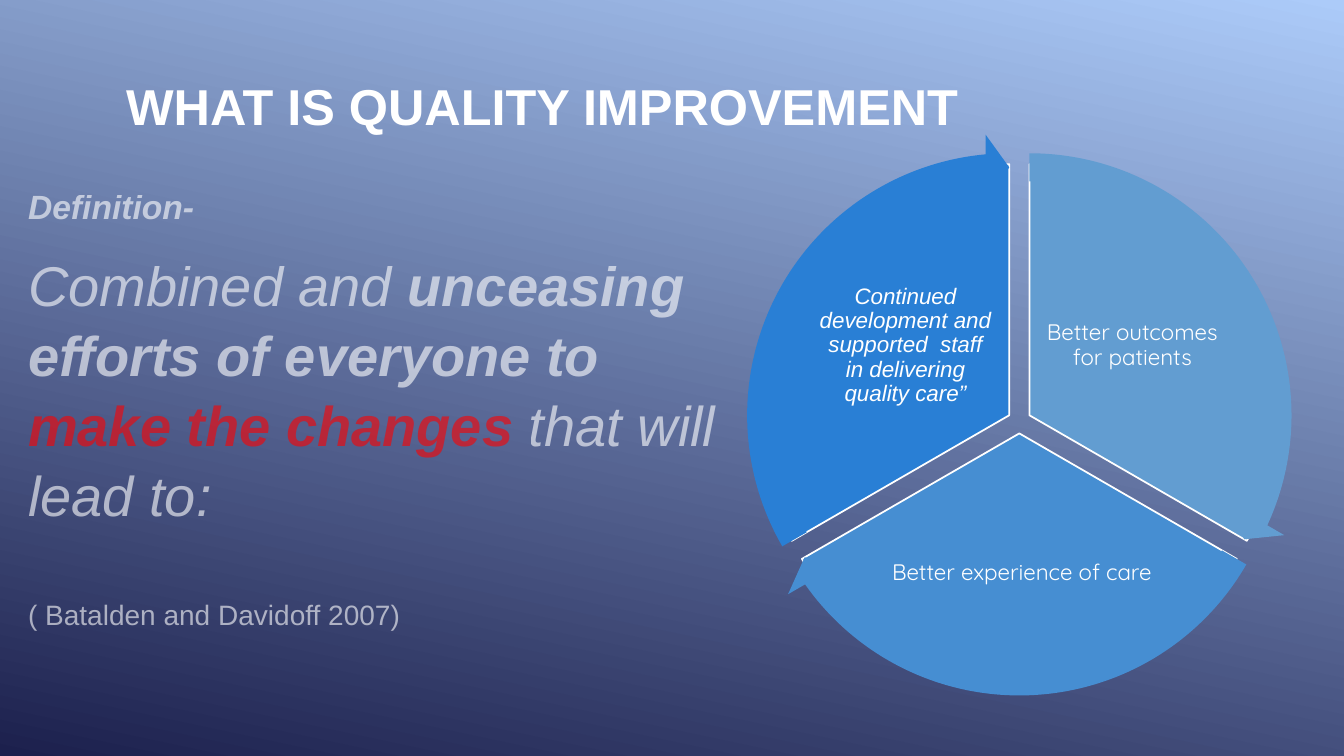
"""Build the slide on the meaning of quality improvement."""
from lxml import etree
from pptx import Presentation
from pptx.dml.color import RGBColor
from pptx.enum.shapes import MSO_SHAPE
from pptx.enum.text import MSO_ANCHOR, PP_ALIGN
from pptx.oxml.ns import qn
from pptx.util import Inches, Pt

PIE, ARROW = MSO_SHAPE.PIE, MSO_SHAPE.CIRCULAR_ARROW
TOP, MIDDLE = MSO_ANCHOR.TOP, MSO_ANCHOR.MIDDLE
CENTER = PP_ALIGN.CENTER
WHITE = RGBColor(0xFF, 0xFF, 0xFF)
RED = RGBColor(0xFF, 0x00, 0x00)
PALE = RGBColor(0xAC, 0xCB, 0xF9)
NAVY = RGBColor(0x1C, 0x20, 0x4D)
SKY = RGBColor(0x62, 0x9D, 0xD1)
AZURE = RGBColor(0x46, 0x8E, 0xD2)
BLUE = RGBColor(0x29, 0x7F, 0xD5)


def add_disc(kind, x, y, size, color, angles):
    disc = slide.shapes.add_shape(kind, Inches(x - size / 2), Inches(y - size / 2),
                                  Inches(size), Inches(size))
    disc.shadow.inherit = False
    disc.fill.solid()
    disc.fill.fore_color.rgb = color
    for i, angle in enumerate(angles):
        disc.adjustments[i] = angle
    return disc


def add_box(left, top, width, height, anchor, inset):
    box = slide.shapes.add_textbox(Inches(left), Inches(top), Inches(width), Inches(height))
    frame = box.text_frame
    frame.word_wrap = True
    frame.vertical_anchor = anchor
    frame.margin_left = frame.margin_right = Inches(inset)
    frame.margin_top = frame.margin_bottom = Inches(inset)
    return frame


prs = Presentation()
prs.slide_width, prs.slide_height = Inches(13.33), Inches(7.5)
slide = prs.slides.add_slide(prs.slide_layouts[5])

fill = slide.background.fill
fill.gradient()
fill.gradient_angle = 360 - 102
for stop, color, place in zip(fill.gradient_stops, (PALE, NAVY), (0, 1)):
    stop.color.rgb = color
    stop.position = place

title = slide.shapes.title
title.left, title.top = Inches(1.07), Inches(0)
title.width, title.height = Inches(8.62), Inches(2.09)
title.text_frame.text = "WHAT IS QUALITY IMPROVEMENT"
title.text_frame.vertical_anchor = MIDDLE
head = title.text_frame.paragraphs[0]
head.alignment = CENTER
head.font.name, head.font.size, head.font.bold = "Arial", Pt(36), True
head.font.color.rgb = WHITE

body = add_box(0.18, 1.45, 7.07, 4.93, TOP, 0.1)
body.margin_top = Inches(0.38)
parts = [
    (24, True, 0, [("Definition-", True, WHITE)]),
    (40, True, 15.5, [("Combined and ", False, WHITE),
                      ("unceasing efforts of everyone to ", True, WHITE),
                      ("make the changes ", True, RED),
                      ("that will lead to:", False, WHITE)]),
    (20, False, 48.8, [("( Batalden and Davidoff 2007)", False, WHITE)]),
]
for i, (size, slant, gap, runs) in enumerate(parts):
    para = body.add_paragraph() if i else body.paragraphs[0]
    para.font.name, para.font.size, para.font.italic = "Arial", Pt(size), slant
    para.space_before = Pt(gap)
    para.line_spacing = 1.04
    for text, bold, color in runs:
        run = para.add_run()
        run.text = text
        run.font.bold = bold
        run.font.color.rgb = color
        tint = run.font.fill._xPr.find(".//" + qn("a:srgbClr"))
        etree.SubElement(tint, qn("a:alpha")).set("val", "60000")

wedges = [
    (10.21, 4.12, 162, 18, SKY, (10.34, 2.69, 1.78, 1.48),
     "Better outcomes for patients", "Quicksand", False),
    (10.11, 4.3, 18, 90, AZURE, (8.8, 5.04, 2.67, 1.3),
     "Better experience of care", "Quicksand", False),
    (10.01, 4.12, 90, 162, BLUE, (8.09, 2.69, 1.78, 1.48),
     "Continued development and supported  staff in delivering quality care”", "Arial", True),
]
for x, y, start, end, color, place, text, font, slant in wedges:
    slice_ = add_disc(PIE, x, y, 4.98, color, (start, end))
    slice_.line.color.rgb = WHITE
    slice_.line.width = Pt(1.25)
    label = add_box(*place, MIDDLE, 0.02)
    label.text = text
    para = label.paragraphs[0]
    para.alignment = CENTER
    para.line_spacing = 0.9
    para.font.name, para.font.size, para.font.italic = font, Pt(16), slant
    para.font.color.rgb = WHITE

for x, y, start, end, color, *_ in wedges:
    arc = add_disc(ARROW, x, y, 5.59, color, (0.05, 3.28, end - 3.28, start, 0.06))
    arc.line.fill.background()

prs.save("out.pptx")
